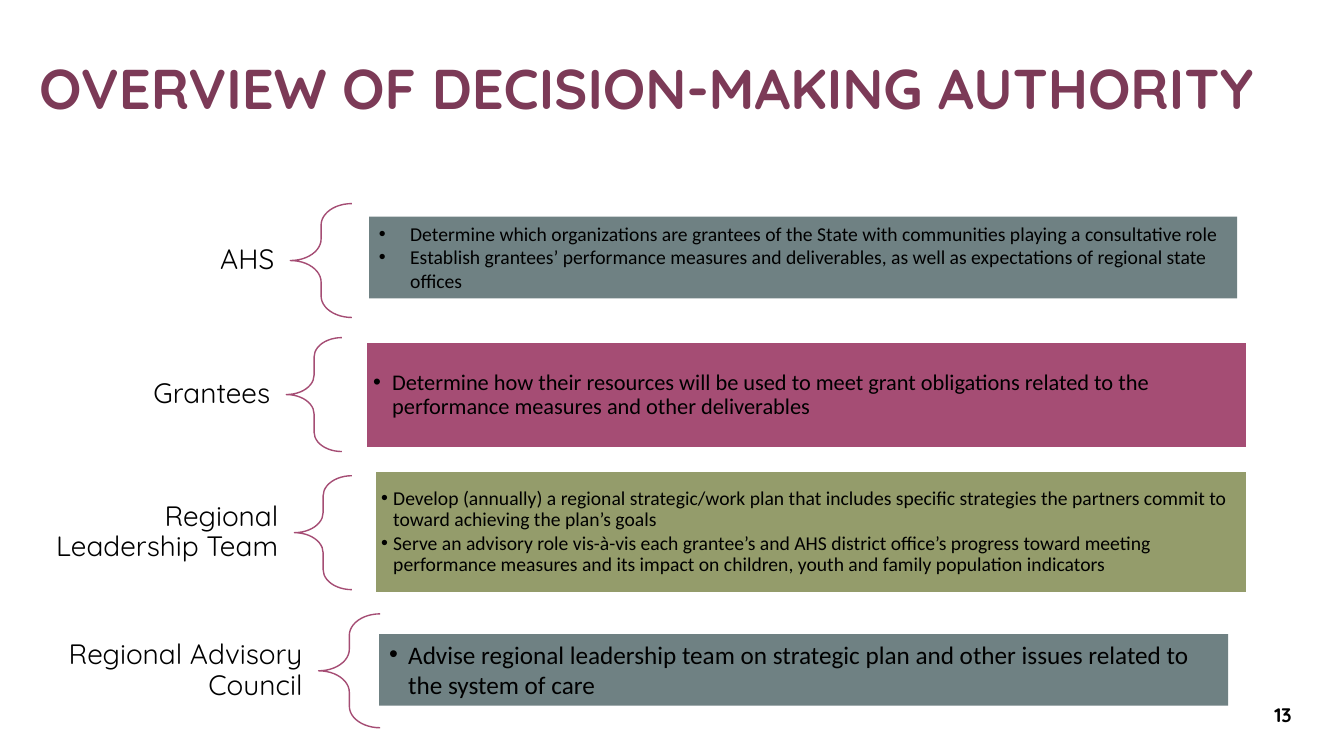
import pptx
import pptx.util
import pptx.dml.color
import pptx.enum.shapes
import pptx.enum.text
import lxml.etree

SHAPE = pptx.enum.shapes.MSO_SHAPE
ALIGN = pptx.enum.text.PP_ALIGN
ANCHOR = pptx.enum.text.MSO_ANCHOR
NS = "http://schemas.openxmlformats.org/drawingml/2006/main"


def color(code):
    return pptx.dml.color.RGBColor.from_string(code)


class Deck:
    """Draws styled elements on a slide, on a grid of tenth-inch columns and rows."""

    head, body = "Quicksand", "Calibri"
    ink, plum, rose = "000000", "7C3A57", "A54D74"
    unit = pptx.util.Inches(0.1)

    def __init__(self, show):
        self.slide = show.slides.add_slide(show.slide_layouts[6])

    def grid(self, *cells):
        return [round(cell * self.unit) for cell in cells]

    def typeset(self, shape, lines, size, font, tint, bold=False, align=ALIGN.LEFT,
                anchor=ANCHOR.MIDDLE, inset=(1, 0.5), space=1, after=0, hang=0):
        frame = shape.text_frame
        frame.word_wrap = True
        frame.vertical_anchor = anchor
        side, top = self.grid(*inset)
        frame.margin_left = frame.margin_right = side
        frame.margin_top = frame.margin_bottom = top
        frame.text = "\n".join(lines)
        for para in frame.paragraphs:
            if hang:
                self.bullet(para, hang)
            para.alignment = align
            para.line_spacing = space
            para.space_after = pptx.util.Pt(after)
            for run in para.runs:
                run.font.name = font
                run.font.size = pptx.util.Pt(size)
                run.font.bold = bold
                run.font.color.rgb = color(tint)

    def bullet(self, para, hang):
        props = para._p.get_or_add_pPr()
        indent = self.grid(hang)[0]
        props.set("marL", str(indent))
        props.set("indent", str(-indent))
        lxml.etree.SubElement(props, f"{{{NS}}}buFont", typeface="Arial")
        lxml.etree.SubElement(props, f"{{{NS}}}buChar", char="•")

    def text(self, place, words, size, **style):
        box = self.slide.shapes.add_textbox(*self.grid(*place))
        self.typeset(box, [words], size, self.head, **style)

    def label(self, top, width, words):
        self.text((0.9, top, width, 11.3), words, 20, tint=self.ink,
                  align=ALIGN.RIGHT, inset=(1.6, 0.6), space=0.9)

    def brace(self, left, top, width):
        shape = self.slide.shapes.add_shape(
            SHAPE.LEFT_BRACE, *self.grid(left, top, width, 11.3))
        shape.shadow.inherit = False
        shape.adjustments[0] = 0.35
        shape.fill.background()
        shape.line.color.rgb = color(self.rose)
        shape.line.width = pptx.util.Pt(1)

    def panel(self, place, fill, lines, size, edge=None, **style):
        shape = self.slide.shapes.add_shape(SHAPE.RECTANGLE, *self.grid(*place))
        shape.shadow.inherit = False
        shape.fill.solid()
        shape.fill.fore_color.rgb = color(fill)
        if edge:
            shape.line.color.rgb = color(edge)
            shape.line.width = pptx.util.Pt(1)
        else:
            shape.line.fill.background()
        self.typeset(shape, lines, size, self.body, self.ink, **style)


def main():
    show = pptx.Presentation()
    show.slide_width = pptx.util.Inches(13.33)
    show.slide_height = pptx.util.Inches(7.5)
    deck = Deck(show)
    slate, olive, white = "6F8183", "949C6B", "FFFFFF"

    deck.text((2.9, 1.9, 124.3, 14.4), "OVERVIEW OF DECISION-MAKING AUTHORITY", 40,
              tint=deck.plum, bold=True, space=0.9)

    groups = [
        ("AHS", 20.2, 27.9, 6.1),
        ("Grantees", 33.5, 27.5, 5.5),
        ("Regional Leadership Team", 47.2, 28.3, 5.7),
        ("Regional Advisory Council", 60.9, 30.7, 6.1),
    ]
    for name, top, width, curl in groups:
        deck.label(top, width, name)
        deck.brace(0.9 + width, top, curl)

    deck.panel((36.6, 21.5, 86.1, 8.1), slate, [
        "Determine which organizations are grantees of the State with communities "
        "playing a consultative role",
        "Establish grantees’ performance measures and deliverables, as well as "
        "expectations of regional state offices",
    ], 14, anchor=ANCHOR.TOP, hang=3.1)
    deck.panel((36.3, 34, 87.4, 10.4), deck.rose, [
        "Determine how their resources will be used to meet grant obligations related "
        "to the performance measures and other deliverables",
    ], 16, white, inset=(0.7, 0.7), space=0.9, after=2.4, hang=1.9)
    deck.panel((37.2, 46.8, 86.5, 12), olive, [
        "Develop (annually) a regional strategic/work plan that includes specific "
        "strategies the partners commit to toward achieving the plan’s goals",
        "Serve an advisory role vis-à-vis each grantee’s and AHS district office’s "
        "progress toward meeting performance measures and its impact on children, "
        "youth and family population indicators",
    ], 14, white, inset=(0.6, 0.6), space=0.9, after=2.1, hang=1.2)
    deck.panel((37.6, 62.9, 84.2, 7.1), slate, [
        "Advise regional leadership team on strategic plan and other issues related "
        "to the system of care",
    ], 18, anchor=ANCHOR.TOP, hang=1.9)

    deck.text((123.5, 68.9, 7.5, 4), "13", 14, tint=deck.ink, bold=True,
              align=ALIGN.CENTER)
    show.save("out.pptx")


if __name__ == "__main__":
    main()
